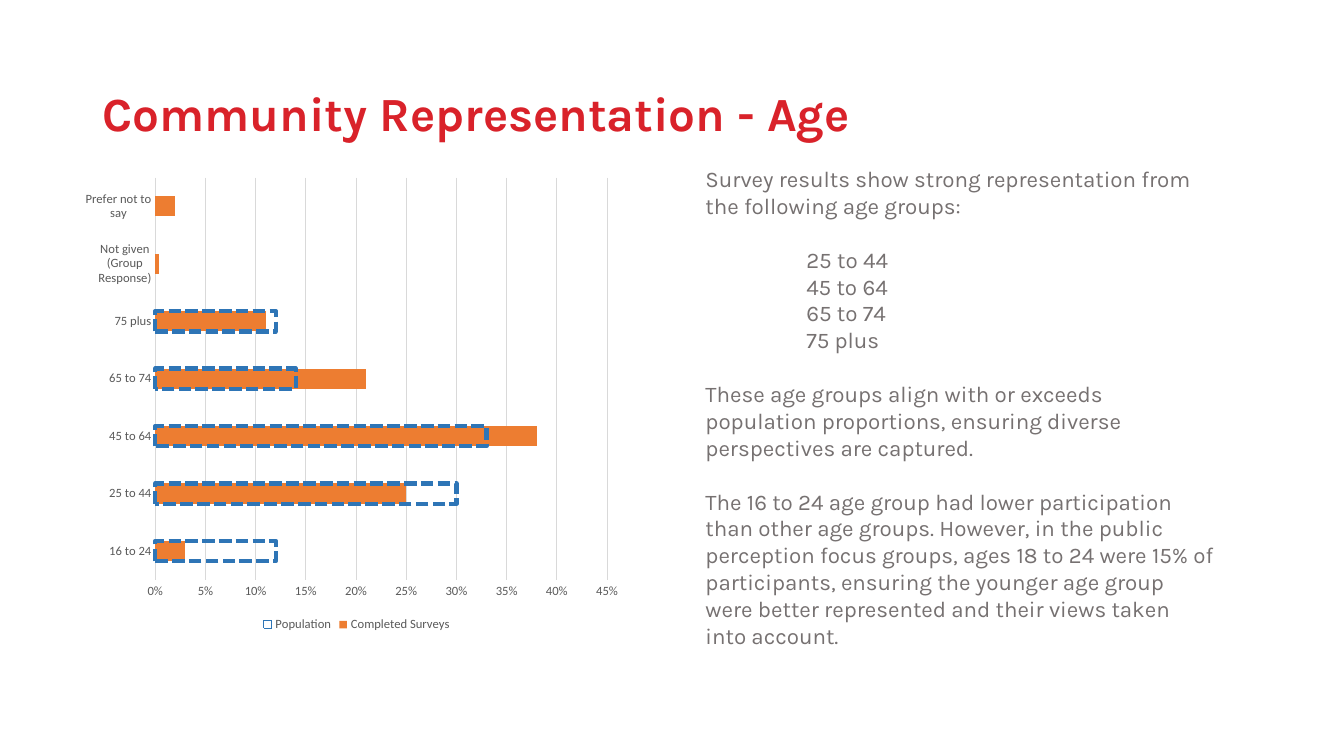
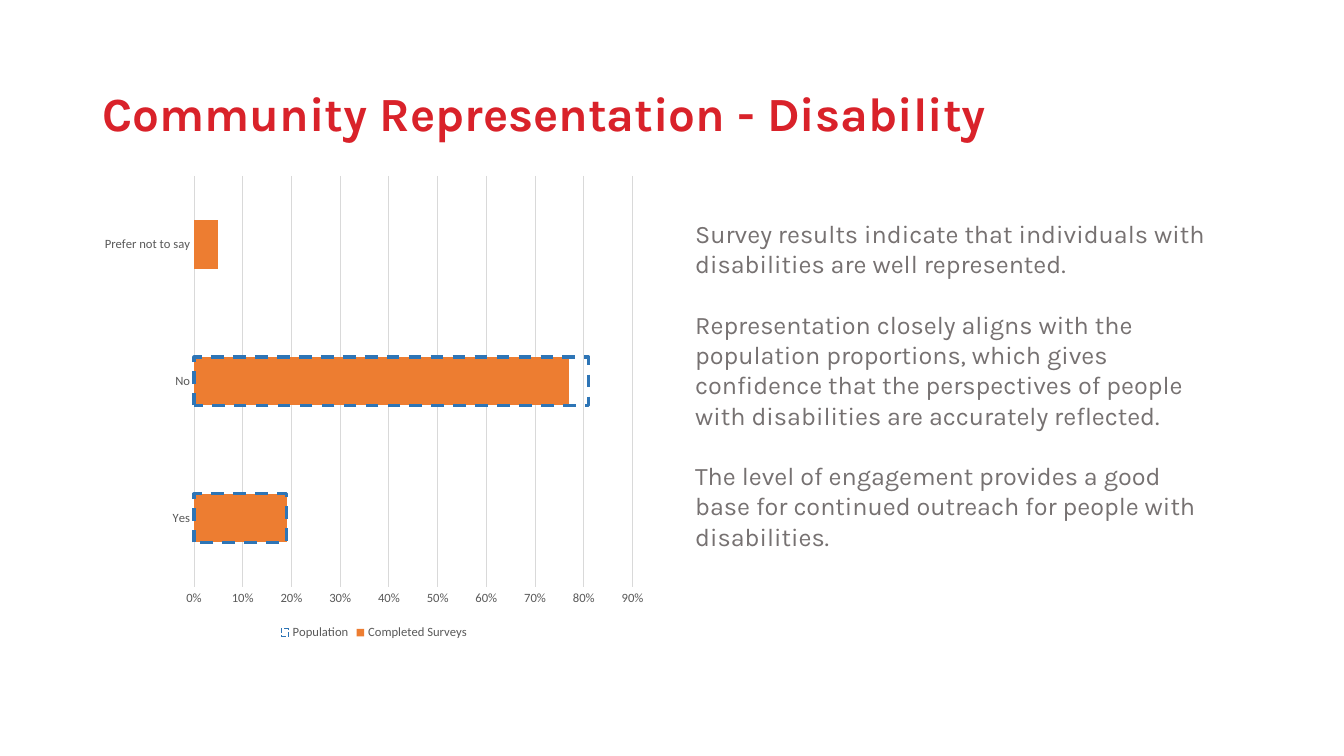
from lxml import etree
from pptx import Presentation
from pptx.chart.data import CategoryChartData
from pptx.dml.color import RGBColor
from pptx.enum.chart import XL_CHART_TYPE, XL_LEGEND_POSITION, XL_TICK_MARK
from pptx.enum.dml import MSO_LINE
from pptx.enum.text import MSO_ANCHOR
from pptx.oxml import parse_xml
from pptx.oxml.ns import nsdecls, qn
from pptx.util import Cm, Pt

BAR_CLUSTERED = XL_CHART_TYPE.BAR_CLUSTERED
LEGEND_BOTTOM = XL_LEGEND_POSITION.BOTTOM
NO_TICK = XL_TICK_MARK.NONE
MIDDLE = MSO_ANCHOR.MIDDLE
SQUARE_DASH = MSO_LINE.SQUARE_DOT
DASH = MSO_LINE.DASH

RED = RGBColor(0xD9, 0x22, 0x2A)
BODY_GREY = RGBColor(0x76, 0x71, 0x71)
LABEL_GREY = RGBColor(0x59, 0x59, 0x59)
GRID_GREY = RGBColor(0xD9, 0xD9, 0xD9)
ORANGE = RGBColor(0xED, 0x7D, 0x31)
BLUE = RGBColor(0x2E, 0x75, 0xB6)
TEXT_FONT = "Karla"
CHART_FONT = "Calibri"

TOPICS = [
    {
        "title": "Community Representation - Age",
        "body_box": (17.53, 4.04, 13.34, 12.57),
        "body_size": 16,
        "gap": 19.2,
        "body": [
            ("Survey results show strong representation from the following age groups:", 0, False),
            ("25 to 44", 2.54, True),
            ("45 to 64", 2.54, False),
            ("65 to 74", 2.54, False),
            ("75 plus", 2.54, False),
            ("These age groups align with or exceeds population proportions, "
             "ensuring diverse perspectives are captured.", 0, True),
            ("The 16 to 24 age group had lower participation than other age groups. "
             "However, in the public perception focus groups, ages 18 to 24 were 15% of "
             "participants, ensuring the younger age group were better represented and "
             "their views taken into account.", 0, True),
        ],
        "chart_box": (2.13, 4.24, 13.72, 11.79),
        "plot": {"x": 0.13, "y": 0.02, "w": 0.83, "h": 0.86},
        "categories": ["16 to 24", "25 to 44", "45 to 64", "65 to 74", "75 plus",
                       "Not given (Group Response)", "Prefer not to say"],
        "completed": [0.03, 0.25, 0.38, 0.21, 0.11, 0.004, 0.02],
        "population": [0.12, 0.3, 0.33, 0.14, 0.12, None, None],
        "axis_max": 0.45,
        "axis_step": 0.05,
        "outline": (3, SQUARE_DASH),
    },
    {
        "title": "Community Representation - Disability",
        "body_box": (17.27, 5.38, 13.69, 11.8),
        "body_size": 18,
        "gap": 21.6,
        "body": [
            ("Survey results indicate that individuals with disabilities are well represented.",
             0, False),
            ("Representation closely aligns with the population proportions, which gives "
             "confidence that the perspectives of people with disabilities are accurately "
             "reflected.", 0, True),
            ("The level of engagement provides a good base for continued outreach for "
             "people with disabilities.", 0, True),
        ],
        "chart_box": (2.34, 4.19, 14.17, 12.04),
        "plot": {"x": 0.18, "y": 0.02, "w": 0.78, "h": 0.86},
        "categories": ["Yes", "No", "Prefer not to say"],
        "completed": [0.19, 0.77, 0.05],
        "population": [0.19, 0.81, None],
        "axis_max": 0.9,
        "axis_step": 0.1,
        "outline": (2.25, DASH),
    },
]


def style_font(font, name, size, color):
    font.name = name
    font.size = Pt(size)
    font.color.rgb = color


prs = Presentation()
prs.slide_width = Cm(33.87)
prs.slide_height = Cm(19.05)

for topic in TOPICS:
    slide = prs.slides.add_slide(prs.slide_layouts[6])

    title = slide.shapes.add_textbox(Cm(2.34), Cm(2.16), Cm(29.21), Cm(1.55)).text_frame
    title.word_wrap = True
    title.vertical_anchor = MIDDLE
    title.text = topic["title"]
    heading = title.paragraphs[0]
    heading.line_spacing = 0.9
    style_font(heading.runs[0].font, TEXT_FONT, 34, RED)
    heading.runs[0].font.bold = True

    body = slide.shapes.add_textbox(*map(Cm, topic["body_box"])).text_frame
    body.word_wrap = True
    body.text = "\n".join(text for text, indent, spaced in topic["body"])
    for paragraph, (text, indent, spaced) in zip(body.paragraphs, topic["body"]):
        if indent:
            paragraph._p.get_or_add_pPr().set("marL", str(Cm(indent)))
        if spaced:
            paragraph.space_before = Pt(topic["gap"])
        style_font(paragraph.runs[0].font, TEXT_FONT, topic["body_size"], BODY_GREY)

    survey = CategoryChartData(number_format="0%")
    survey.categories = topic["categories"]
    survey.add_series("Completed Surveys", topic["completed"])
    survey.add_series("Population", topic["population"])
    chart = slide.shapes.add_chart(BAR_CLUSTERED, *map(Cm, topic["chart_box"]), survey).chart
    chart.has_title = False
    style_font(chart.font, CHART_FONT, 9, LABEL_GREY)
    chart.has_legend = True
    chart.legend.position = LEGEND_BOTTOM
    chart.legend.include_in_layout = False
    style_font(chart.legend.font, CHART_FONT, 9, LABEL_GREY)

    bars = chart.plots[0]
    bars.gap_width = 182
    bars.overlap = 100
    bars.vary_by_categories = False
    completed, population = bars.series
    completed.format.fill.solid()
    completed.format.fill.fore_color.rgb = ORANGE
    population.format.fill.background()
    outline_width, outline_dash = topic["outline"]
    population.format.line.color.rgb = BLUE
    population.format.line.width = Pt(outline_width)
    population.format.line.dash_style = outline_dash

    groups, shares = chart.category_axis, chart.value_axis
    for axis in (groups, shares):
        axis.major_tick_mark = NO_TICK
        axis.minor_tick_mark = NO_TICK
        style_font(axis.tick_labels.font, CHART_FONT, 9, LABEL_GREY)
    shares.minimum_scale = 0
    shares.maximum_scale = topic["axis_max"]
    shares.major_unit = topic["axis_step"]
    shares.tick_labels.number_format = "0%"
    shares.tick_labels.number_format_is_linked = False
    shares.format.line.fill.background()
    shares.has_major_gridlines = True
    for line in (groups.format.line, shares.major_gridlines.format.line):
        line.color.rgb = GRID_GREY
        line.width = Pt(0.75)

    layout = parse_xml(f"<c:layout {nsdecls('c')}><c:manualLayout/></c:layout>")
    settings = {"layoutTarget": "inner", "xMode": "edge", "yMode": "edge", **topic["plot"]}
    for tag, value in settings.items():
        etree.SubElement(layout[0], qn(f"c:{tag}")).set("val", str(value))
    chart._chartSpace.chart.plotArea.insert(0, layout)

prs.save("out.pptx")
